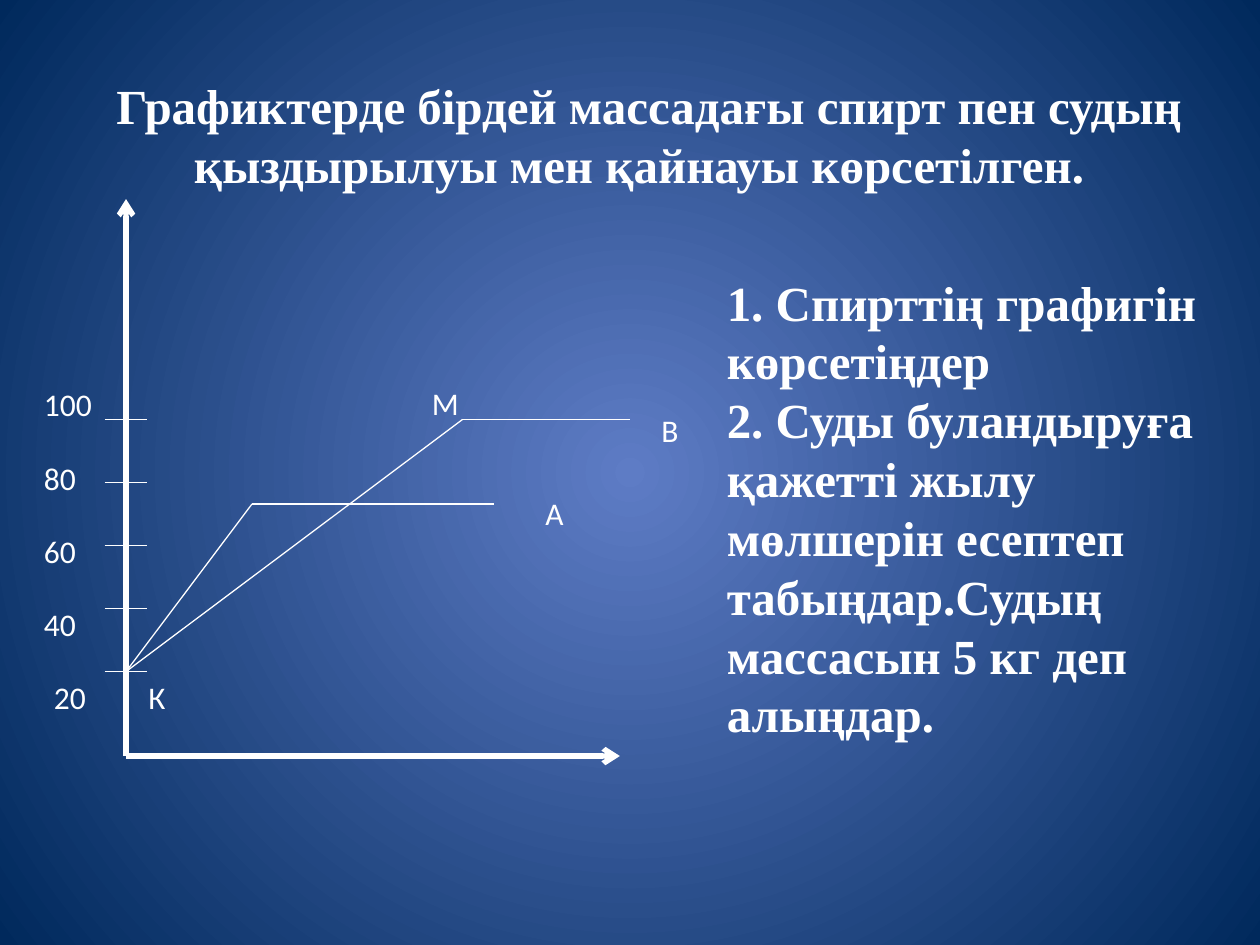
from dataclasses import dataclass
from lxml.etree import SubElement
from pptx import Presentation
from pptx.dml.color import RGBColor as Color
from pptx.enum.shapes import MSO_CONNECTOR as Connector
from pptx.enum.text import MSO_ANCHOR as Anchor, MSO_AUTO_SIZE as AutoSize, PP_ALIGN as Align
from pptx.oxml.ns import qn
from pptx.util import Inches, Pt


@dataclass(frozen=True)
class Theme:
    ink: str = "FFFFFF"
    glow: str = "5E7CC5"
    edge: str = "00295C"
    heading_font: str = "Times New Roman"
    label_font: str = "Calibri"
    heading_size: int = 28
    lead_size: int = 20
    label_size: int = 18
    axis_width: float = 3
    thin_width: float = 0.75


THEME = Theme()
TITLE = "Графиктерде бірдей массадағы спирт пен судың қыздырылуы мен қайнауы көрсетілген. "
TASKS = [
    "1. Спирттің графигін көрсетіңдер",
    "2. Суды буландыруға қажетті жылу мөлшерін есептеп табыңдар.Судың массасын 5 кг деп алыңдар.",
]
ORIGIN = (1, 6)
AXIS_ENDS = [(1, 1.58), (4.92, 6)]
START = (1, 5.33)
TICK_GAP, TICK_REACH = 0.5, 0.17
CURVES = [
    [START, (3.67, 3.33), (5, 3.33)],
    [START, (2, 4), (3.92, 4)],
]
SCALE = [("20", 0.33, 0.48), ("40", 0.25, 0.48), ("60", 0.25, 0.48), ("80", 0.25, 0.48), ("100", 0.25, 0.62)]
SCALE_BOTTOM, SCALE_GAP, LABEL_HEIGHT = 5.33, 0.58, 0.4
POINTS = [("A", 4.23, 3.87, 0.37), ("B", 5.15, 3.21, 0.37), ("К", 1.08, 5.33, 0.35), ("М", 3.33, 3, 0.41)]


def paint_background(page):
    fill = page.background.fill
    fill.gradient()
    for stop, color, position in zip(fill.gradient_stops, (THEME.glow, THEME.edge), (0, 1)):
        stop.color.rgb = Color.from_string(color)
        stop.position = position
    gradient = page.element.find(".//" + qn("a:gradFill"))
    gradient.remove(gradient.find(qn("a:lin")))
    circle = SubElement(gradient, qn("a:path"), path="circle")
    SubElement(circle, qn("a:fillToRect"), l="50000", t="50000", r="50000", b="50000")


def add_line(page, start, end, width=THEME.thin_width, arrow=False):
    line = page.shapes.add_connector(Connector.STRAIGHT, *map(Inches, start + end))
    line.line.color.rgb = Color.from_string(THEME.ink)
    line.line.width = Pt(width)
    properties = line.element.spPr
    if arrow:
        SubElement(properties.find(qn("a:ln")), qn("a:tailEnd"), type="arrow")
    SubElement(properties, qn("a:effectLst"))


def add_box(page, place, anchor=Anchor.TOP, wrap=True):
    frame = page.shapes.add_textbox(*map(Inches, place)).text_frame
    frame.word_wrap = wrap
    frame.auto_size = AutoSize.SHAPE_TO_FIT_TEXT
    frame.vertical_anchor = anchor
    return frame


def add_span(para, text, font=THEME.heading_font, size=THEME.heading_size, bold=True, italic=False):
    span = para.add_run()
    span.text = text
    span.font.name = font
    span.font.size = Pt(size)
    span.font.bold = bold
    span.font.italic = italic
    span.font.color.rgb = Color.from_string(THEME.ink)


def add_label(page, text, left, top, width):
    frame = add_box(page, (left, top, width, LABEL_HEIGHT), wrap=False)
    add_span(frame.paragraphs[0], text, THEME.label_font, THEME.label_size, bold=False)


def add_title(page):
    para = add_box(page, (0.62, 0.55, 9, 1.04), Anchor.MIDDLE).paragraphs[0]
    para.alignment = Align.CENTER
    add_span(para, " ", THEME.label_font, THEME.lead_size, italic=True)
    add_span(para, TITLE)


def add_graph(page):
    for end in AXIS_ENDS:
        add_line(page, ORIGIN, end, THEME.axis_width, arrow=True)
    axis_x, first_tick = START
    for index, (text, left, width) in enumerate(SCALE):
        tick_y = first_tick - index * TICK_GAP
        add_line(page, (axis_x - TICK_REACH, tick_y), (axis_x + TICK_REACH, tick_y))
        add_label(page, text, left, SCALE_BOTTOM - index * SCALE_GAP, width)
    for curve in CURVES:
        for start, end in zip(curve, curve[1:]):
            add_line(page, start, end)
    for point in POINTS:
        add_label(page, *point)


def add_tasks(page):
    frame = add_box(page, (5.67, 2.11, 4.33, 3.83))
    for index, task in enumerate(TASKS):
        para = frame.add_paragraph() if index else frame.paragraphs[0]
        add_span(para, task)


def main():
    deck = Presentation()
    deck.slide_width, deck.slide_height = Inches(10), Inches(7.5)
    page = deck.slides.add_slide(deck.slide_layouts[6])
    paint_background(page)
    add_title(page)
    add_graph(page)
    add_tasks(page)
    deck.save("out.pptx")


if __name__ == "__main__":
    main()
